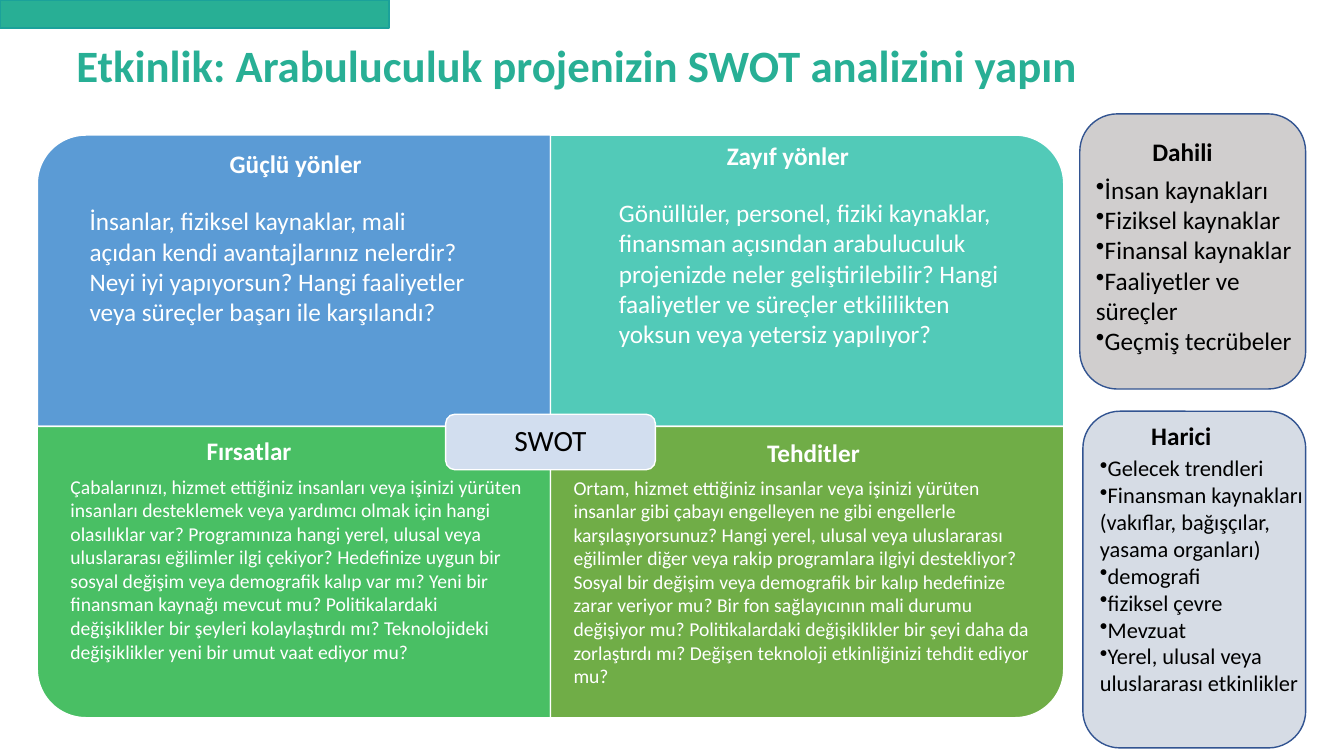
from lxml import etree
from pptx import Presentation
from pptx import util as u
from pptx.dml.color import RGBColor
from pptx.enum import shapes, text
from pptx.oxml.ns import qn

COLORS = {
    "title": "28AF95", "title_edge": "1BA19A", "white": "FFFFFF", "black": "000000",
    "strengths": "5B9BD5", "weaknesses": "52CAB8", "opportunities": "49BF64",
    "threats": "70AD47", "hub": "D2DEEF", "internal": "D0CECE",
    "external": "D6DCE5", "panel_edge": "325491",
}
SHAPE = shapes.MSO_SHAPE
ALIGN = text.PP_ALIGN


class SlideBuilder:
    font = "Calibri"

    def __init__(self, slide):
        self.slide = slide

    def color(self, name):
        return RGBColor.from_string(COLORS[name])

    def shape(self, kind, left, top, width, height, fill, edge):
        sp = self.slide.shapes.add_shape(kind, *map(u.Inches, (left, top, width, height)))
        sp.shadow.inherit = False
        sp.fill.solid()
        sp.fill.fore_color.rgb = self.color(fill)
        sp.line.color.rgb = self.color(edge)
        sp.line.width = u.Pt(1)
        return sp

    def quadrant(self, left, top, width, height, turn, fill):
        """Place a one-corner-rounded box, turned so its round corner faces outwards."""
        w, h = (height, width) if turn % 180 else (width, height)
        x, y = left + (width - w) / 2, top + (height - h) / 2
        sp = self.shape(SHAPE.ROUND_1_RECTANGLE, x, y, w, h, fill, "white")
        sp.rotation = turn

    def set_text(self, tf, lines, size, color, bold=False, align=ALIGN.LEFT, bullet=False):
        for i, line in enumerate(lines):
            p = tf.add_paragraph() if i else tf.paragraphs[0]
            p.text = line
            p.alignment = align
            p.font.name = self.font
            p.font.size = u.Pt(size)
            p.font.bold = bold
            p.font.color.rgb = self.color(color)
            if bullet:
                pPr = p._p.get_or_add_pPr()
                mark = etree.Element(qn("a:buChar"), char="•")
                pPr.insert_element_before(mark, "a:tabLst", "a:defRPr", "a:extLst")

    def text(self, left, top, width, height, lines, size, color, wrap=True, **style):
        box = self.slide.shapes.add_textbox(*map(u.Inches, (left, top, width, height)))
        tf = box.text_frame
        tf.word_wrap = wrap
        self.set_text(tf, lines, size, color, **style)
        return tf

    def heading(self, left, top, width, label, color="white"):
        self.text(left, top, width, 0.4, [label], 18, color, wrap=False, bold=True)


QUADRANT_W, QUADRANT_H = 5.09, 2.89
GRID_LEFT, GRID_TOP = 0.37, 1.34

# column, row, turn, fill, heading (left, top, width, label), body (box, size, wording)
QUADRANTS = [
    (0, 0, 270, "strengths", (2.18, 1.42, 1.52, "Güçlü yönler"), (0.79, 1.99, 3.93, 1.31), 18,
     "İnsanlar, fiziksel kaynaklar, mali açıdan kendi avantajlarınız nelerdir? Neyi iyi "
     "yapıyorsun? Hangi faaliyetler veya süreçler başarı ile karşılandı?"),
    (1, 0, 0, "weaknesses", (7.11, 1.34, 1.42, "Zayıf yönler"), (6.04, 1.91, 4.14, 1.62), 18,
     "Gönüllüler, personel, fiziki kaynaklar, finansman açısından arabuluculuk projenizde "
     "neler geliştirilebilir? Hangi faaliyetler ve süreçler etkililikten yoksun veya "
     "yetersiz yapılıyor?"),
    (0, 1, 180, "opportunities", (1.95, 4.27, 1.05, "Fırsatlar"), (0.6, 4.66, 4.72, 1.99), 14,
     "Çabalarınızı, hizmet ettiğiniz insanları veya işinizi yürüten insanları desteklemek "
     "veya yardımcı olmak için hangi olasılıklar var? Programınıza hangi yerel, ulusal veya "
     "uluslararası eğilimler ilgi çekiyor? Hedefinize uygun bir sosyal değişim veya "
     "demografik kalıp var mı? Yeni bir finansman kaynağı mevcut mu? Politikalardaki "
     "değişiklikler bir şeyleri kolaylaştırdı mı? Teknolojideki değişiklikler yeni bir umut "
     "vaat ediyor mu?"),
    (1, 1, 90, "threats", (7.51, 4.29, 1.13, "Tehditler"), (5.59, 4.67, 4.87, 2.22), 14,
     "Ortam, hizmet ettiğiniz insanlar veya işinizi yürüten insanlar gibi çabayı engelleyen "
     "ne gibi engellerle karşılaşıyorsunuz? Hangi yerel, ulusal veya uluslararası eğilimler "
     "diğer veya rakip programlara ilgiyi destekliyor? Sosyal bir değişim veya demografik "
     "bir kalıp hedefinize zarar veriyor mu? Bir fon sağlayıcının mali durumu değişiyor mu? "
     "Politikalardaki değişiklikler bir şeyi daha da zorlaştırdı mı? Değişen teknoloji "
     "etkinliğinizi tehdit ediyor mu?"),
]

# panel box, fill, heading, list box, size, items
PANELS = [
    ((10.71, 1.13, 2.24, 2.73), "internal", (11.33, 1.3, 0.81, "Dahili"),
     (10.77, 1.68, 2.24, 1.92), 18,
     ["İnsan kaynakları", "Fiziksel kaynaklar", "Finansal kaynaklar",
      "Faaliyetler ve süreçler", "Geçmiş tecrübeler"]),
    ((10.74, 4.08, 2.21, 3.34), "external", (11.32, 4.12, 0.8, "Harici"),
     (10.81, 4.46, 2.52, 2.52), 16,
     ["Gelecek trendleri", "Finansman kaynakları (vakıflar, bağışçılar, yasama organları)",
      "demografi", "fiziksel çevre", "Mevzuat",
      "Yerel, ulusal veya uluslararası etkinlikler"]),
]


def main():
    prs = Presentation()
    prs.slide_width, prs.slide_height = u.Inches(13.33), u.Inches(7.5)
    s = SlideBuilder(prs.slides.add_slide(prs.slide_layouts[6]))

    s.shape(SHAPE.RECTANGLE, 0, 0, 3.86, 0.28, "title", "title_edge")
    tf = s.text(-0.13, 0.39, 10.92, 0.8, ["Etkinlik: Arabuluculuk projenizin SWOT analizini yapın"],
                32, "title", bold=True, align=ALIGN.RIGHT)
    tf.paragraphs[0].line_spacing = 0.9

    for col, row, turn, fill, *_ in QUADRANTS:
        s.quadrant(GRID_LEFT + col * QUADRANT_W, GRID_TOP + row * QUADRANT_H,
                   QUADRANT_W, QUADRANT_H, turn, fill)
    hub = s.shape(SHAPE.ROUNDED_RECTANGLE, 4.42, 4.11, 2.08, 0.55, "hub", "white")
    hub.text_frame.vertical_anchor = text.MSO_ANCHOR.MIDDLE
    s.set_text(hub.text_frame, ["SWOT"], 21, "black", align=ALIGN.CENTER)
    hub.text_frame.paragraphs[0].line_spacing = 0.9
    for *_, heading, box, size, body in QUADRANTS:
        s.heading(*heading)
        s.text(*box, [body], size, "white")

    for panel, fill, heading, box, size, items in PANELS:
        s.shape(SHAPE.ROUNDED_RECTANGLE, *panel, fill, "panel_edge")
        s.heading(*heading, color="black")
        s.text(*box, items, size, "black", bullet=True)

    prs.save("out.pptx")


if __name__ == "__main__":
    main()
